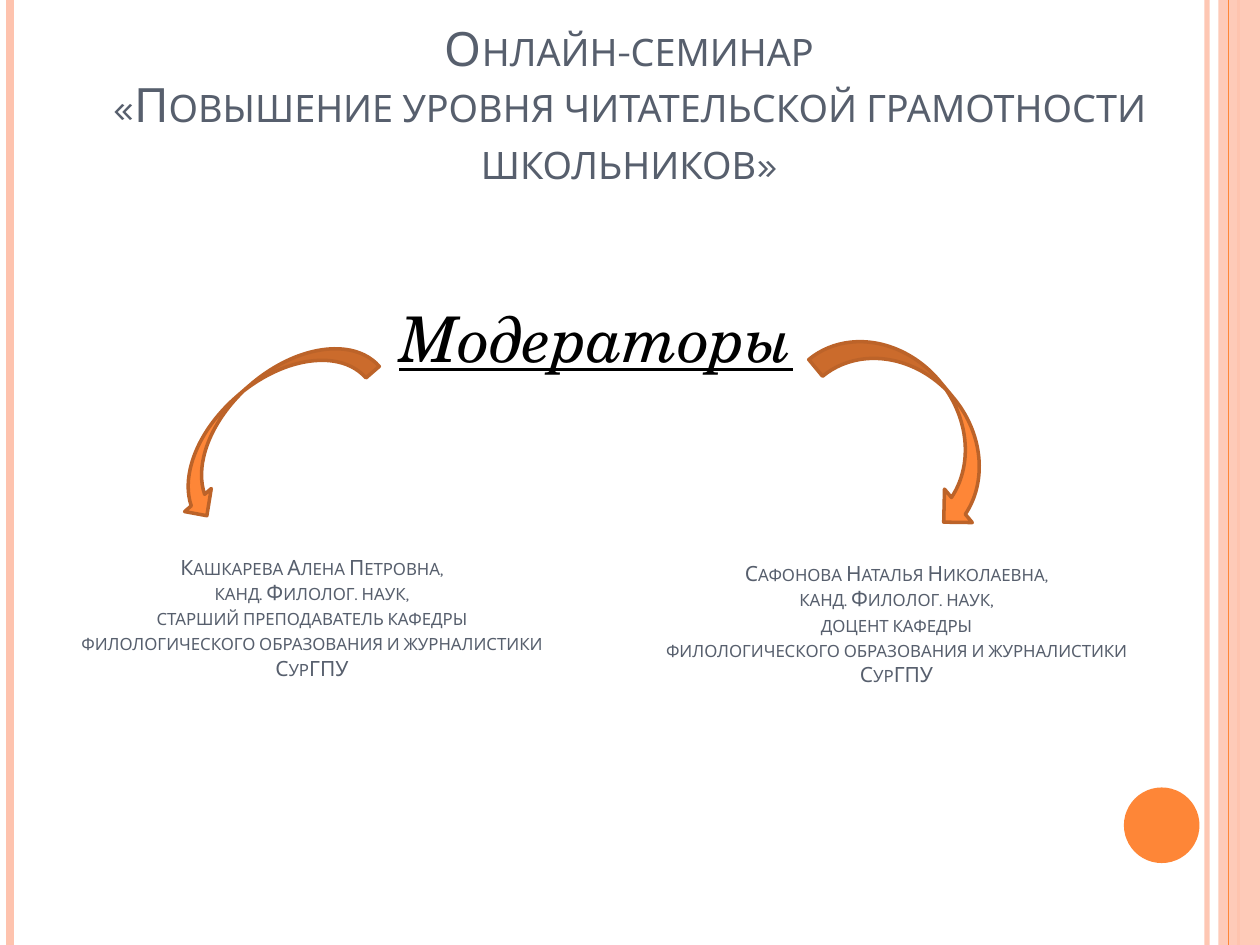
from lxml import etree
from pptx import Presentation
from pptx.dml.color import RGBColor
from pptx.enum.shapes import MSO_CONNECTOR, MSO_SHAPE
from pptx.enum.text import MSO_ANCHOR, PP_ALIGN
from pptx.oxml.ns import qn
from pptx.util import Inches, Pt

STRAIGHT = MSO_CONNECTOR.STRAIGHT
RECT, OVAL = MSO_SHAPE.RECTANGLE, MSO_SHAPE.OVAL
ARROW_RIGHT = MSO_SHAPE.CURVED_RIGHT_ARROW
ARROW_LEFT = MSO_SHAPE.CURVED_LEFT_ARROW
CENTER = PP_ALIGN.CENTER
TOP, BOTTOM = MSO_ANCHOR.TOP, MSO_ANCHOR.BOTTOM

ORANGE, PEACH, BROWN = "FE8637", "FEC3AE", "BC6329"
HEADING = {"name": "Karla", "color": "575F6D"}
SCRIPT = {"name": "TeX Gyre Schola", "color": "000000", "size": Pt(36),
          "italic": True, "underline": True}


def paint(color_format, color, alpha=100):
    color_format.rgb = RGBColor.from_string(color)
    if alpha < 100:
        node = color_format._xFill.find(qn("a:srgbClr"))
        etree.SubElement(node, qn("a:alpha")).set("val", str(alpha * 1000))


def add_stripe(s, x, color, width, alpha=100):
    line = s.shapes.add_connector(STRAIGHT, Inches(x), 0, Inches(x), Inches(7.5))
    line.line.width = Pt(width)
    line.line.fill.solid()
    paint(line.line.fill.fore_color, color, alpha)
    etree.SubElement(line._element.spPr, qn("a:effectLst"))


def add_figure(s, kind, box, color, alpha=100, outline=None, rotation=0):
    sp = s.shapes.add_shape(kind, *map(Inches, box))
    sp.shadow.inherit = False
    sp.rotation = rotation
    sp.fill.solid()
    paint(sp.fill.fore_color, color, alpha)
    if outline:
        sp.line.width = Pt(2)
        paint(sp.line.color, outline)
    else:
        sp.line.fill.background()


def add_text(s, box, lines, style, anchor=BOTTOM, small_caps=True,
             space_before=0, **margins):
    tf = s.shapes.add_textbox(*map(Inches, box)).text_frame
    tf.word_wrap = True
    tf.vertical_anchor = anchor
    for side, value in margins.items():
        setattr(tf, "margin_" + side, Inches(value))
    for i, text in enumerate(lines):
        p = tf.paragraphs[0] if i == 0 else tf.add_paragraph()
        p.alignment = CENTER
        p.space_before = Pt(space_before)
        p.text = text
        for r in p.runs:
            for key, value in style.items():
                if key == "color":
                    paint(r.font.color, value)
                else:
                    setattr(r.font, key, value)
            if small_caps:
                r.font._element.set("cap", "small")


def add_speaker(s, box, name, position, **margins):
    lines = [name, "канд. Филолог. наук,", position,
             "филологического образования и журналистики СурГПУ"]
    add_text(s, box, lines, {**HEADING, "size": Pt(12)}, **margins)


def main():
    prs = Presentation()
    prs.slide_width, prs.slide_height = Inches(10), Inches(7.5)
    s = prs.slides.add_slide(prs.slide_layouts[6])

    add_stripe(s, 9.58, PEACH, 3, 93)
    add_stripe(s, 0.08, PEACH, 4.5)
    add_stripe(s, 9.83, PEACH, 1.5)
    add_figure(s, RECT, (9.67, 0, 0.33, 7.5), PEACH, 87)
    add_stripe(s, 9.75, ORANGE, 0.75)
    add_figure(s, OVAL, (8.92, 6.25, 0.6, 0.6), ORANGE)

    add_text(s, (0.58, 2.33, 8.17, 3.78), ["Модераторы"], SCRIPT, TOP,
             small_caps=False, space_before=6, left=0.23)
    add_text(s, (0.5, 0.3, 8.99, 1.25),
             ["Онлайн-семинар\v«Повышение уровня читательской грамотности школьников»"],
             {**HEADING, "size": Pt(27)})

    add_figure(s, ARROW_RIGHT, (1.81, 2.36, 0.56, 1.95), ORANGE,
               outline=BROWN, rotation=49.1)
    add_speaker(s, (0.28, 3.95, 4.39, 1.7), "Кашкарева Алена Петровна,",
                "старший преподаватель кафедры", bottom=0.25)
    add_figure(s, ARROW_LEFT, (6.93, 2.42, 0.69, 1.85), ORANGE,
               outline=BROWN, rotation=320.3)
    add_speaker(s, (4.92, 4.1, 4.39, 1.4), "Сафонова Наталья Николаевна,",
                "доцент кафедры")

    prs.save("out.pptx")


if __name__ == "__main__":
    main()
